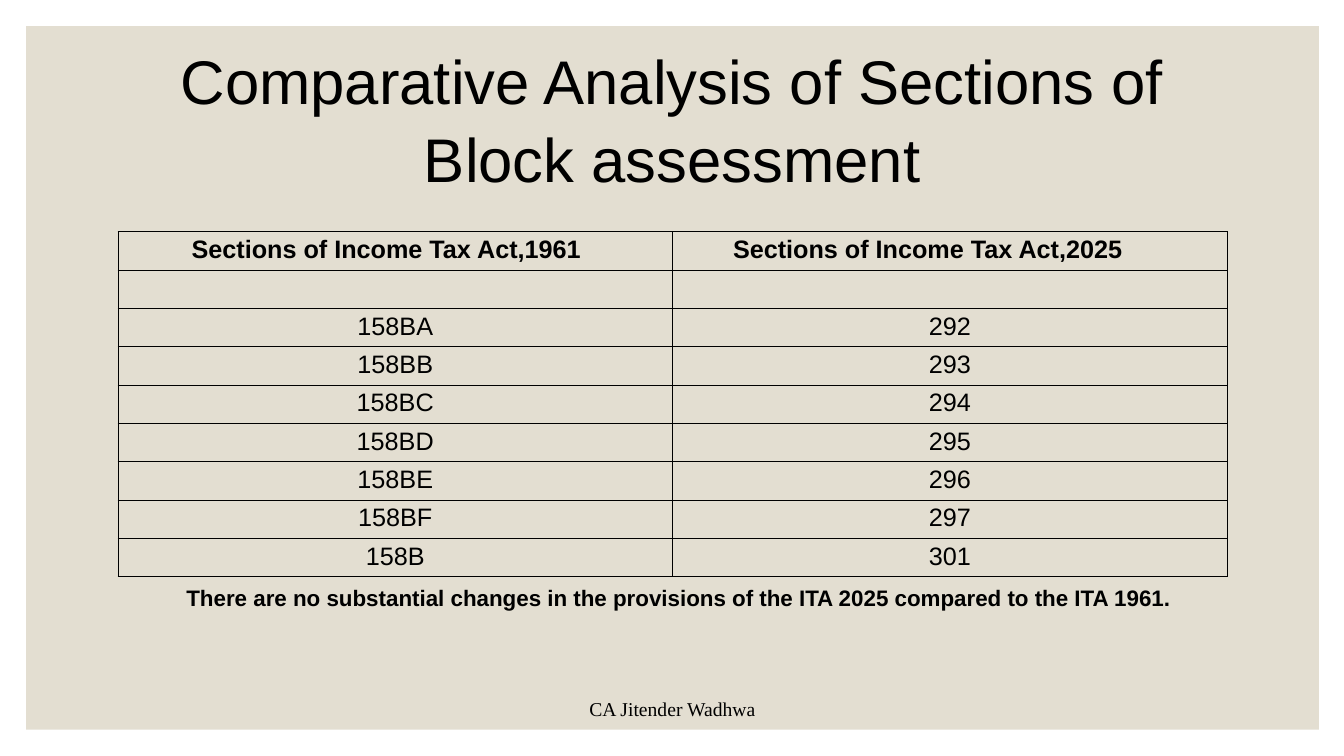
import pptx
import pptx.util
import pptx.dml.color
import pptx.enum.shapes
import pptx.enum.text
import pptx.oxml
import pptx.oxml.ns

Inches = pptx.util.Inches
Pt = pptx.util.Pt
RGBColor = pptx.dml.color.RGBColor
ALIGN = pptx.enum.text.PP_ALIGN
ANCHOR = pptx.enum.text.MSO_ANCHOR

BLACK = RGBColor(0x00, 0x00, 0x00)
SAND = RGBColor(0xE3, 0xDE, 0xD1)

HEADS = [("Sections of Income Tax Act,1961", 0.73),
         ("Sections of Income Tax Act,2025", 0.6)]
PAIRS = [("", ""), ("158BA", "292"), ("158BB", "293"), ("158BC", "294"),
         ("158BD", "295"), ("158BE", "296"), ("158BF", "297"), ("158B", "301")]


def write(frame, text, size=18, font="Arial", bold=False, align=ALIGN.LEFT,
          space=None):
    """Put one formatted paragraph in a text frame."""
    para = frame.paragraphs[0]
    para.text = text
    para.alignment = align
    para.line_spacing = space
    para.font.size = Pt(size)
    para.font.name = font
    para.font.bold = bold
    para.font.color.rgb = BLACK


def add_text(slide, box, text, anchor=ANCHOR.TOP, inset=(0.1, 0.05), **style):
    shape = slide.shapes.add_textbox(*map(Inches, box))
    frame = shape.text_frame
    frame.word_wrap = True
    frame.vertical_anchor = anchor
    frame.margin_left = frame.margin_right = Inches(inset[0])
    frame.margin_top = frame.margin_bottom = Inches(inset[1])
    write(frame, text, **style)


def add_panel(slide, box):
    rect = pptx.enum.shapes.MSO_SHAPE.RECTANGLE
    panel = slide.shapes.add_shape(rect, *map(Inches, box))
    panel.shadow.inherit = False
    panel.fill.solid()
    panel.fill.fore_color.rgb = SAND
    panel.line.fill.background()


def add_edges(cell, width=0.57):
    """Draw a thin black line on all four sides of a cell."""
    props = cell._tc.get_or_add_tcPr()
    for side in ("lnL", "lnR", "lnT", "lnB"):
        props.append(pptx.oxml.parse_xml(
            f'<a:{side} {pptx.oxml.ns.nsdecls("a")} w="{Pt(width)}">'
            f'<a:solidFill><a:srgbClr val="{BLACK}"/></a:solidFill></a:{side}>'))


def set_cell(cell, text, left=0.04, **style):
    add_edges(cell)
    cell.fill.background()
    cell.margin_left = Inches(left)
    cell.margin_right = cell.margin_top = cell.margin_bottom = Inches(0.04)
    write(cell.text_frame, text, **style)


def add_grid(slide, left, top, width, height):
    count = len(PAIRS) + 1
    frame = slide.shapes.add_table(count, len(HEADS), Inches(left), Inches(top),
                                   Inches(width), Inches(height * count))
    table = frame.table
    table.first_row = table.horz_banding = False
    for row in table.rows:
        row.height = Inches(height)
    for col, (head, left) in enumerate(HEADS):
        set_cell(table.cell(0, col), head, left=left, bold=True)
    for row, pair in enumerate(PAIRS, 1):
        for col, text in enumerate(pair):
            set_cell(table.cell(row, col), text, align=ALIGN.CENTER)


def main():
    deck = pptx.Presentation()
    deck.slide_width = Inches(13.33)
    deck.slide_height = Inches(7.5)
    slide = deck.slides.add_slide(deck.slide_layouts[6])

    # Background panel and title
    add_panel(slide, (0.26, 0.26, 12.82, 6.98))
    add_text(slide, (1.17, 0.35, 11, 2.2),
             "Comparative Analysis of Sections of Block assessment",
             inset=(0, 0.04), size=44, align=ALIGN.CENTER, space=1.05)

    # Table of matching sections
    add_grid(slide, 1.17, 2.3, 11, 0.38)

    # Remark and footer
    add_text(slide, (1.75, 5.75, 10.25, 0.35),
             "There are no substantial changes in the provisions of the "
             "ITA 2025 compared to the ITA 1961.", size=16, bold=True)
    add_text(slide, (3.82, 6.9, 5.7, 0.3), "CA Jitender Wadhwa",
             anchor=ANCHOR.BOTTOM, size=14, font="Times New Roman",
             align=ALIGN.CENTER)

    deck.save("out.pptx")


if __name__ == "__main__":
    main()
